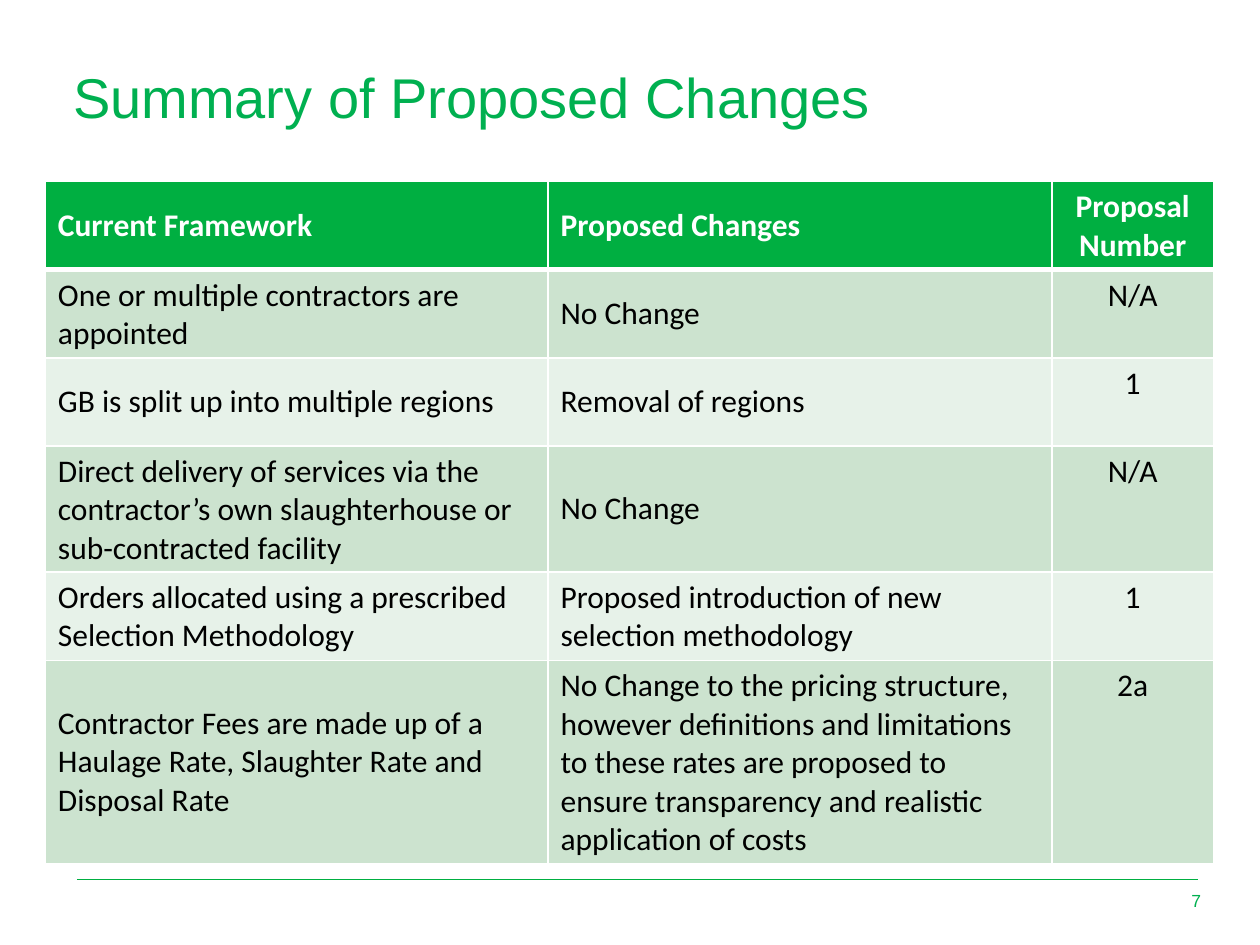
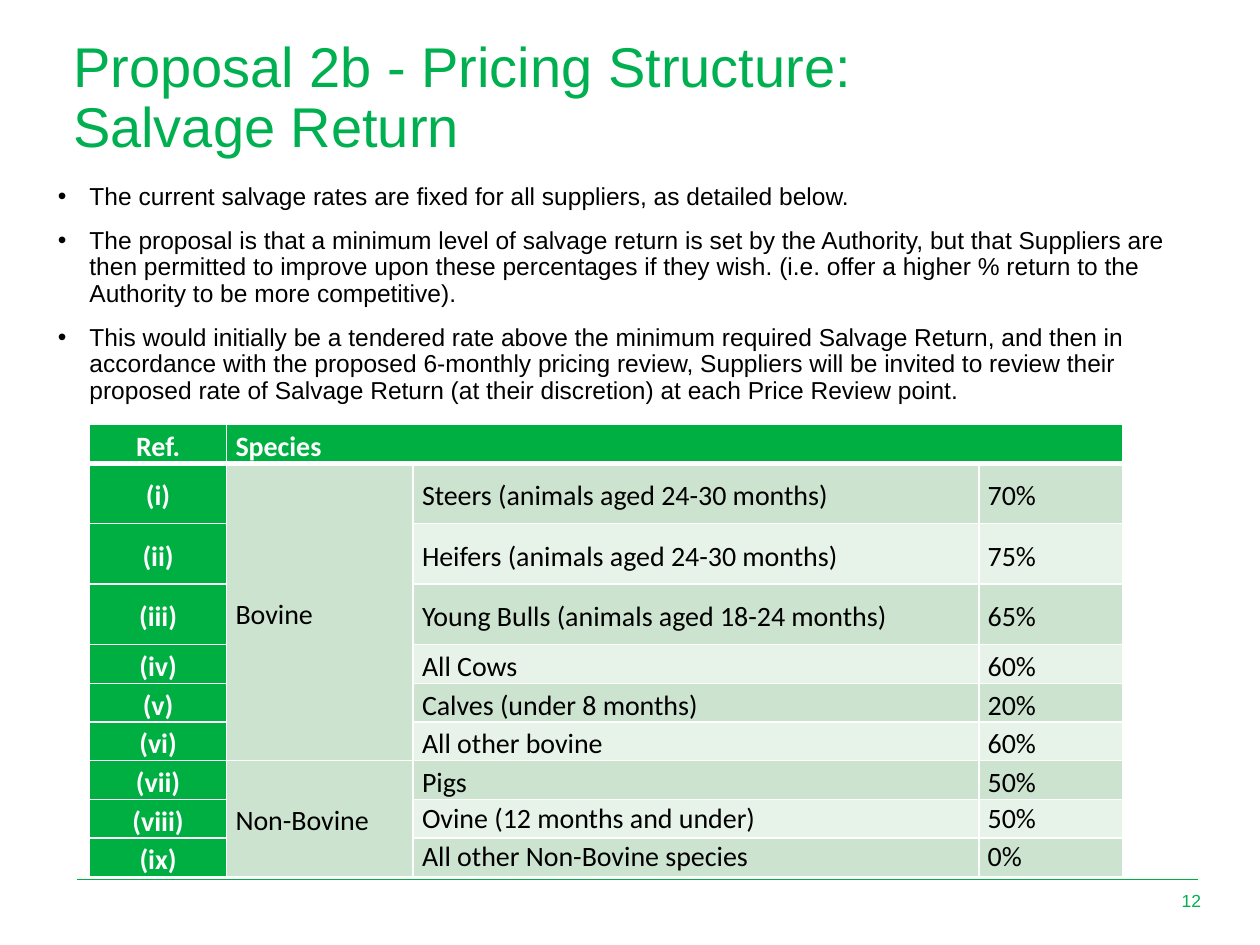
from lxml import etree
from pptx import Presentation
from pptx import util as u
from pptx.dml.color import RGBColor
from pptx.enum import shapes, text
from pptx.oxml import ns

GREEN = RGBColor(0x00, 0xAF, 0x41)
TITLE_GREEN = RGBColor(0x00, 0xB0, 0x50)
BAND_DARK = RGBColor(0xCC, 0xE3, 0xCF)
BAND_LIGHT = RGBColor(0xE7, 0xF2, 0xE9)
WHITE = RGBColor(0xFF, 0xFF, 0xFF)
BLACK = RGBColor(0, 0, 0)
LEFT, CENTER, RIGHT = text.PP_ALIGN.LEFT, text.PP_ALIGN.CENTER, text.PP_ALIGN.RIGHT
TOP, MIDDLE = text.MSO_ANCHOR.TOP, text.MSO_ANCHOR.MIDDLE

FRAMEWORK_ROWS = [
    ("Current Framework", "Proposed Changes", "Proposal Number"),
    ("One or multiple contractors are appointed", "No Change", "N/A"),
    ("GB is split up into multiple regions", "Removal of regions", "1"),
    ("Direct delivery of services via the contractor’s own slaughterhouse or "
     "sub-contracted facility", "No Change", "N/A"),
    ("Orders allocated using a prescribed Selection Methodology",
     "Proposed introduction of new selection methodology", "1"),
    ("Contractor Fees are made up of a Haulage Rate, Slaughter Rate and Disposal Rate",
     "No Change to the pricing structure, however definitions and limitations to these "
     "rates are proposed to ensure transparency and realistic application of costs", "2a"),
]
SALVAGE_POINTS = [
    "The current salvage rates are fixed for all suppliers, as detailed below.",
    "The proposal is that a minimum level of salvage return is set by the Authority, but "
    "that Suppliers are then permitted to improve upon these percentages if they wish. "
    "(i.e. offer a higher % return to the Authority to be more competitive).",
    "This would initially be a tendered rate above the minimum required Salvage Return, and "
    "then in accordance with the proposed 6-monthly pricing review, Suppliers will be invited "
    "to review their proposed rate of Salvage Return (at their discretion) at each Price "
    "Review point.",
]
SALVAGE_ROWS = [
    ("Ref.", "Species", "", ""),
    ("(i)", "Bovine", "Steers (animals aged 24-30 months)", "70%"),
    ("(ii)", "", "Heifers (animals aged 24-30 months)", "75%"),
    ("(iii)", "", "Young Bulls (animals aged 18-24 months)", "65%"),
    ("(iv)", "", "All Cows", "60%"),
    ("(v)", "", "Calves (under 8 months)", "20%"),
    ("(vi)", "", "All other bovine", "60%"),
    ("(vii)", "Non-Bovine", "Pigs", "50%"),
    ("(viii)", "", "Ovine (12 months and under)", "50%"),
    ("(ix)", "", "All other Non-Bovine species", "0%"),
]
SALVAGE_MERGES = [((0, 1), (0, 3)), ((1, 1), (6, 1)), ((7, 1), (9, 1))]


def place(shape, box):
    """Move a shape to a box of left, top, width and height in inches."""
    shape.left, shape.top, shape.width, shape.height = map(u.Inches, box)


def add_span(para, words, size, color, font="Arial", bold=False):
    """Add one formatted run to a paragraph."""
    span = para.add_run()
    span.text = words
    span.font.name, span.font.size = font, u.Pt(size)
    span.font.color.rgb, span.font.bold = color, bold


def fill_title(page, box, lines):
    """Write the green title, one line of text per entry."""
    place(page.shapes.title, box)
    frame = page.shapes.title.text_frame
    frame.vertical_anchor, frame.auto_size = TOP, text.MSO_AUTO_SIZE.NONE
    para = frame.paragraphs[0]
    para.alignment, para.line_spacing = LEFT, 0.9
    for number, words in enumerate(lines):
        if number:
            para.add_line_break()
        add_span(para, words, 32, TITLE_GREEN)


def fill_bullets(body, box, points):
    """Write a bulleted list in the body placeholder."""
    place(body, box)
    frame = body.text_frame
    frame.vertical_anchor, frame.auto_size = TOP, text.MSO_AUTO_SIZE.NONE
    for number, words in enumerate(points):
        para = frame.add_paragraph() if number else frame.paragraphs[0]
        para.line_spacing, para.space_before = 0.9, u.Pt(10)
        add_span(para, words, 14, BLACK)
        props = para._p.get_or_add_pPr()
        props.set("marL", str(u.Inches(0.25)))
        props.set("indent", str(-u.Inches(0.25)))
        etree.SubElement(props, ns.qn("a:buFont"), typeface="Arial")
        etree.SubElement(props, ns.qn("a:buChar"), char="•")


def add_footer(page, number):
    """Draw the rule at the foot of a page and its page number."""
    rule = page.shapes.add_connector(
        shapes.MSO_CONNECTOR.STRAIGHT,
        *map(u.Inches, (0.61, 6.98, 9.51, 6.98)))
    rule.line.color.rgb, rule.line.width = GREEN, u.Pt(0.5)
    etree.SubElement(rule._element.spPr, ns.qn("a:effectLst"))
    box = page.shapes.add_textbox(*map(u.Inches, (9.18, 6.95, 0.45, 0.4)))
    box.text_frame.word_wrap = True
    box.text_frame.vertical_anchor = MIDDLE
    para = box.text_frame.paragraphs[0]
    para.alignment = RIGHT
    add_span(para, str(number), 10, TITLE_GREEN)


def paint_cell(cell, row, head):
    """Give a cell its band colour and white borders."""
    borders = {"a:lnL": 1, "a:lnR": 1, "a:lnT": 3 if row == 1 else 1,
               "a:lnB": 3 if row == 0 else 1}
    props = cell._tc.get_or_add_tcPr()
    for tag, points in borders.items():
        line = etree.SubElement(props, ns.qn(tag), w=str(u.Pt(points)))
        solid = etree.SubElement(line, ns.qn("a:solidFill"))
        etree.SubElement(solid, ns.qn("a:srgbClr"), val=str(WHITE))
    cell.fill.solid()
    cell.fill.fore_color.rgb = GREEN if head else BAND_DARK if row % 2 else BAND_LIGHT


def add_grid(page, box, rows, widths, heights, size, center, head_columns=0, merges=()):
    """Add a banded table, with one centred column, and return it."""
    grid = page.shapes.add_table(len(rows), len(widths), *map(u.Inches, box)).table
    for column, width in zip(grid.columns, widths):
        column.width = u.Inches(width)
    for line, height in zip(grid.rows, heights):
        line.height = u.Inches(height)
    for start, end in merges:
        grid.cell(*start).merge(grid.cell(*end))
    for row, entries in enumerate(rows):
        for column, words in enumerate(entries):
            cell = grid.cell(row, column)
            head = row == 0 or column < head_columns
            cell.vertical_anchor = MIDDLE
            paint_cell(cell, row, head)
            para = cell.text_frame.paragraphs[0]
            para.alignment = CENTER if column == center else LEFT
            if words:
                add_span(para, words, size, WHITE if head else BLACK, "Calibri", head)
    return grid


def build_summary(page):
    """Build the page that compares the framework with the changes."""
    fill_title(page, (0.48, 0.51, 9.04, 0.53), ["Summary of Proposed Changes"])
    add_footer(page, 7)
    grid = add_grid(page, (0.36, 1.44, 9.27, 5.41), FRAMEWORK_ROWS, (3.99, 4, 1.28),
                    (0.7, 0.7, 0.7, 1, 0.7, 1.61), 18, center=2)
    for row in range(len(FRAMEWORK_ROWS)):
        grid.cell(row, 2).vertical_anchor = TOP


def build_salvage(page):
    """Build the page on salvage return with its list and rates."""
    fill_title(page, (0.48, 0.26, 9.04, 0.53),
               ["Proposal 2b - Pricing Structure: ", "Salvage Return"])
    fill_bullets(page.placeholders[1], (0.36, 1.41, 9.26, 0.75), SALVAGE_POINTS)
    add_footer(page, 12)
    heights = [0.3] + [0.48] * 3 + [0.3] * 6
    grid = add_grid(page, (0.71, 3.37, 8.2, 3.51), SALVAGE_ROWS, (1.09, 1.48, 4.49, 1.14),
                    heights, 16, center=0, head_columns=1, merges=SALVAGE_MERGES)
    for row, entries in enumerate(SALVAGE_ROWS):
        for column in range(len(entries)):
            cell = grid.cell(row, column)
            cell.margin_left = cell.margin_right = u.Inches(0.07)
            cell.margin_top = cell.margin_bottom = 0
            if row < 8 or column < 2:
                para = cell.text_frame.paragraphs[0]
                para.line_spacing, para.space_before = 1.15, u.Pt(12)


def main():
    """Build and save the deck."""
    deck = Presentation()
    deck.slide_width, deck.slide_height = u.Inches(10), u.Inches(7.5)
    for layout, build in ((5, build_summary), (1, build_salvage)):
        build(deck.slides.add_slide(deck.slide_layouts[layout]))
    deck.save("out.pptx")


if __name__ == "__main__":
    main()
